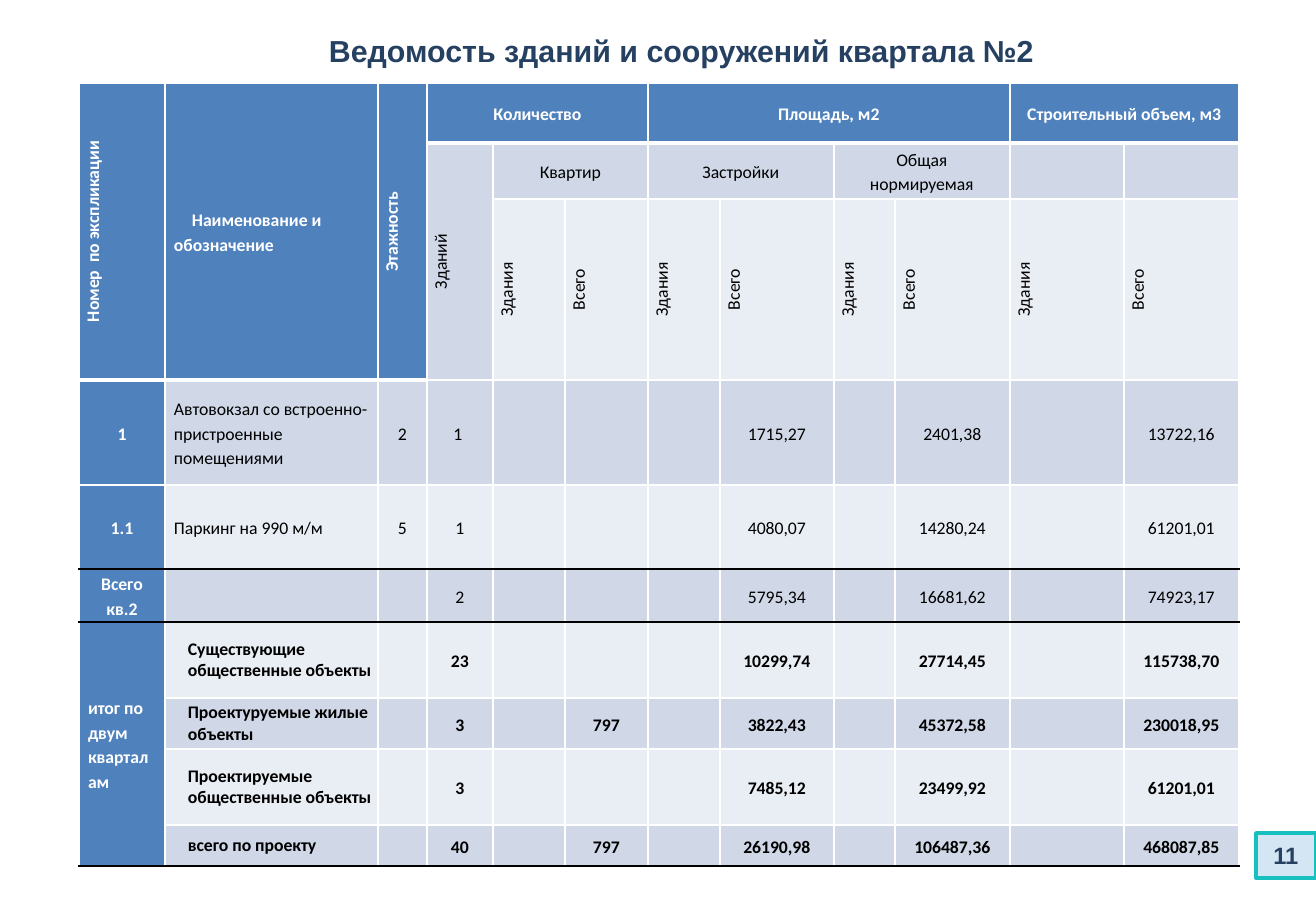
from typing import NamedTuple

from lxml.etree import SubElement
from pptx import Presentation
from pptx.dml.color import RGBColor
from pptx.enum.shapes import MSO_SHAPE
from pptx.enum.text import MSO_ANCHOR, PP_ALIGN
from pptx.oxml import parse_xml
from pptx.oxml.ns import nsdecls, qn
from pptx.util import Emu, Pt

PX = 7526  # EMU per px
COLORS = {
    "white": "FFFFFF", "black": "000000", "navy": "254061", "header": "4F81BD",
    "dark_band": "D0D8E8", "light_band": "E9EDF4", "badge": "D4E5F4", "teal": "17BFBF",
}


class HeaderCell(NamedTuple):
    row: int
    col: int
    text: str
    rows: int = 1
    cols: int = 1
    vertical: bool = False


class BuildingRow(NamedTuple):
    label: str
    name: str
    floors: str
    buildings: str
    flats: str
    footprint: str
    floor_area: str
    volume: str


COL_WIDTHS = [86, 213, 49, 66, 72, 83, 72, 114, 61, 115, 114, 115]
ROW_HEIGHTS = [60, 56, 181, 105, 84, 53, 76, 51, 76, 41]
DATA_COLS = [0, 1, 2, 3, 5, 7, 9, 11]
FIRST_DATA_ROW = 3
FIRST_TOTAL_ROW = 6
LAST_ROW = len(ROW_HEIGHTS) - 1
BLACK_RULES = {4, 5, LAST_ROW}  # rows with a black line below

HEADER = [
    HeaderCell(0, 0, "Номер  по экспликации", rows=3, vertical=True),
    HeaderCell(0, 1, "Наименование и обозначение", rows=3),
    HeaderCell(0, 2, "Этажность", rows=3, vertical=True),
    HeaderCell(0, 3, "Количество", cols=3),
    HeaderCell(0, 6, "Площадь, м2", cols=4),
    HeaderCell(0, 10, "Строительный объем, м3", cols=2),
    HeaderCell(1, 3, "Зданий", rows=2, vertical=True),
    HeaderCell(1, 4, "Квартир", cols=2),
    HeaderCell(1, 6, "Застройки", cols=2),
    HeaderCell(1, 8, "Общая нормируемая", cols=2),
] + [
    HeaderCell(2, col, "Всего" if col % 2 else "Здания", vertical=True)
    for col in range(4, 12)
]

BUILDINGS = [
    BuildingRow("1", "Автовокзал со встроенно-пристроенные помещениями", "2", "1 ", "",
                "1715,27", "2401,38", "13722,16"),
    BuildingRow("1.1", "Паркинг на 990 м/м", "5", "1", "", "4080,07", "14280,24", "61201,01"),
    BuildingRow("Всего кв.2", "", "", "2", "", "5795,34", "16681,62", "74923,17"),
    BuildingRow("итог по двум кварталам", "Существующие общественные объекты", "", "23", "",
                "10299,74", "27714,45", "115738,70"),
    BuildingRow("", "Проектуруемые жилые объекты", "", "3", "797",
                "3822,43", "45372,58", "230018,95"),
    BuildingRow("", "Проектируемые общественные объекты", "", "3", "",
                "7485,12", "23499,92", "61201,01"),
    BuildingRow("", "всего по проекту", "", "40", "797",
                "26190,98", "106487,36", "468087,85"),
]


def px(n: int) -> Emu:
    return Emu(n * PX)


def rgb(name: str) -> RGBColor:
    return RGBColor.from_string(COLORS[name])


def write(tf, text: str, *, size: float, font: str, color: str, bold: bool = True,
          align=PP_ALIGN.CENTER, spacing: float = 1.0, indent: int = 0) -> None:
    p = tf.paragraphs[0]
    p.alignment = align
    p.line_spacing = spacing
    if indent:
        p._p.get_or_add_pPr().set("indent", str(px(indent)))
    if not text:  # keeps empty cells from growing
        SubElement(p._p, qn("a:endParaRPr"), sz=str(int(size * 100)))
        return
    r = p.add_run()
    r.text = text
    r.font.size = Pt(size)
    r.font.name = font
    r.font.bold = bold
    r.font.color.rgb = rgb(color)


def set_borders(cell, top: str, bottom: str, bottom_pt: int) -> None:
    sides = [("lnL", "white", 1), ("lnR", "white", 1),
             ("lnT", top, 1), ("lnB", bottom, bottom_pt)]
    tcPr = cell._tc.get_or_add_tcPr()
    for i, (side, color, width) in enumerate(sides):
        tcPr.insert(i, parse_xml(
            f'<a:{side} {nsdecls("a")} w="{Pt(width)}"><a:solidFill>'
            f'<a:srgbClr val="{COLORS[color]}"/></a:solidFill></a:{side}>'))


def format_cell(cell, row: int, col: int, text: str) -> None:
    is_head = row == 0 or col == 0 or (row < FIRST_DATA_ROW and col < 3)
    is_total = row >= FIRST_TOTAL_ROW
    total_name = is_total and col == 1
    fill = "header" if is_head else "dark_band" if row % 2 else "light_band"
    cell.fill.solid()
    cell.fill.fore_color.rgb = rgb(fill)
    cell.vertical_anchor = MSO_ANCHOR.MIDDLE
    cell.margin_left, cell.margin_right = (px(23), px(1)) if total_name else (px(9), px(9))
    cell.margin_top = cell.margin_bottom = 0
    left = col == 1 or (is_total and col == 0)
    write(cell.text_frame, text, size=10.5, font="Calibri",
          color="white" if is_head else "black", bold=is_head or is_total,
          align=PP_ALIGN.LEFT if left else PP_ALIGN.CENTER,
          spacing=1.0 if total_name else 1.15,
          indent=18 if (row, col) == (0, 1) else 0)
    last = row + (cell.span_height if cell.is_merge_origin else 1) - 1
    # Black rules stop at the merged totals label
    inside_label = col == 0 and FIRST_TOTAL_ROW <= last < LAST_ROW
    set_borders(cell,
                top="black" if row - 1 in BLACK_RULES else "white",
                bottom="black" if last in BLACK_RULES and not inside_label else "white",
                bottom_pt=3 if is_head and last < FIRST_DATA_ROW else 1)


def add_building_table(s) -> None:
    table = s.shapes.add_table(len(ROW_HEIGHTS), len(COL_WIDTHS), px(79), px(83),
                               px(sum(COL_WIDTHS)), px(sum(ROW_HEIGHTS))).table
    table.first_row = table.horz_banding = False
    for column, width in zip(table.columns, COL_WIDTHS):
        column.width = px(width)
    for table_row, height in zip(table.rows, ROW_HEIGHTS):
        table_row.height = px(height)

    # Merged and rotated cells
    for h in HEADER:
        cell = table.cell(h.row, h.col)
        if h.rows * h.cols > 1:
            cell.merge(table.cell(h.row + h.rows - 1, h.col + h.cols - 1))
        if h.vertical:
            cell._tc.get_or_add_tcPr().set("vert", "vert270")
    table.cell(FIRST_TOTAL_ROW, 0).merge(table.cell(LAST_ROW, 0))

    # Text and format
    texts = {(h.row, h.col): h.text for h in HEADER}
    for row, building in enumerate(BUILDINGS, FIRST_DATA_ROW):
        texts.update({(row, col): text for col, text in zip(DATA_COLS, building)})
    for row in range(len(ROW_HEIGHTS)):
        for col in range(len(COL_WIDTHS)):
            format_cell(table.cell(row, col), row, col, texts.get((row, col), ""))


def main() -> None:
    prs = Presentation()
    prs.slide_width, prs.slide_height = px(1316), px(911)
    s = prs.slides.add_slide(prs.slide_layouts[6])

    # Title
    tf = s.shapes.add_textbox(px(136), px(26), px(1091), px(49)).text_frame
    tf.word_wrap = True
    write(tf, "Ведомость зданий и сооружений квартала №2",
          size=18, font="Arial", color="navy")

    add_building_table(s)

    # Page number
    sp = s.shapes.add_shape(MSO_SHAPE.RECTANGLE, px(1256), px(833), px(60), px(45))
    sp.shadow.inherit = False
    sp.fill.solid()
    sp.fill.fore_color.rgb = rgb("badge")
    sp.line.color.rgb = rgb("teal")
    sp.line.width = Pt(2)
    tf = sp.text_frame
    tf.vertical_anchor = MSO_ANCHOR.MIDDLE
    tf.margin_left = tf.margin_right = px(14)
    tf.margin_top = tf.margin_bottom = px(7)
    write(tf, "11", size=14, font="Arial", color="navy")

    prs.save("out.pptx")


if __name__ == "__main__":
    main()
